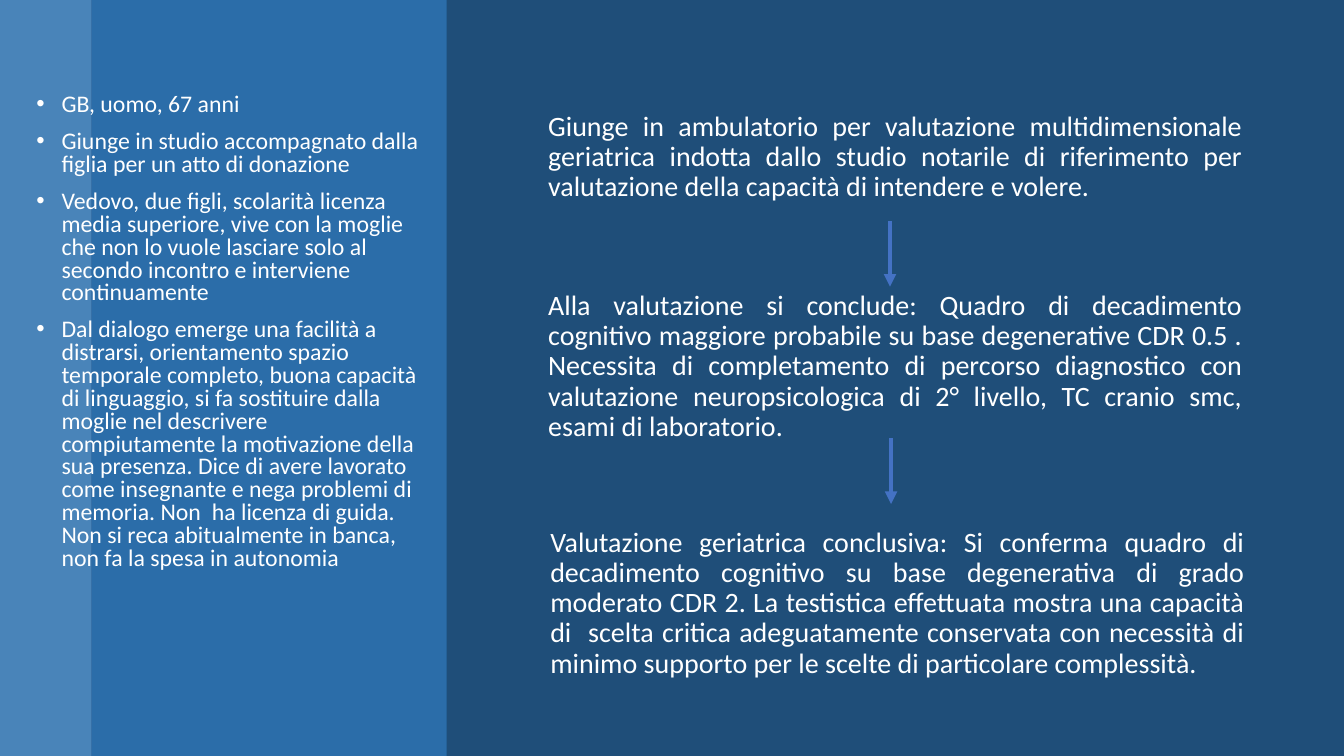
"""Build a slide with a patient profile beside a three-step assessment path."""
import pptx
import pptx.dml.color
import pptx.enum.shapes
import pptx.enum.text
import pptx.oxml.ns
import pptx.oxml.xmlchemy
import pptx.util

Pt = pptx.util.Pt
COLORS = {"background": "1F4E79", "edge": "5B9BD5", "panel": "2E75B6",
          "text": "FFFFFF", "arrow": "4472C4"}
FONT = "Calibri"
SLIDE_WIDTH, SLIDE_HEIGHT = 960, 540

BANDS = [("edge", 0, 65.5, 70), ("panel", 65.5, 253.5, 80)]
PROFILE = [
    "GB, uomo, 67 anni",
    "Giunge in studio accompagnato dalla figlia per un atto di donazione",
    "Vedovo, due figli, scolarità licenza media superiore, vive con la moglie che non lo "
    "vuole lasciare solo al secondo incontro e interviene continuamente",
    "Dal dialogo emerge una facilità a distrarsi, orientamento spazio temporale completo, "
    "buona capacità di linguaggio, si fa sostituire dalla moglie nel descrivere compiutamente "
    "la motivazione della sua presenza. Dice di avere lavorato come insegnante e nega problemi "
    "di memoria. Non  ha licenza di guida. Non si reca abitualmente in banca, non fa la spesa "
    "in autonomia",
]
STEPS = [
    (384.5, 76.5, 102,
     "Giunge in ambulatorio per valutazione multidimensionale geriatrica indotta dallo studio "
     "notarile di riferimento per valutazione della capacità di intendere e volere."),
    (384.5, 204.5, 132,
     "Alla valutazione si conclude: Quadro di decadimento cognitivo maggiore probabile su base "
     "degenerative CDR 0.5 . Necessita di completamento di percorso diagnostico con valutazione "
     "neuropsicologica di 2° livello, TC cranio smc, esami di laboratorio."),
    (386, 373.5, 143,
     "Valutazione geriatrica conclusiva: Si conferma quadro di decadimento cognitivo su base "
     "degenerativa di grado moderato CDR 2. La testistica effettuata mostra una capacità di  "
     "scelta critica adeguatamente conservata con necessità di minimo supporto per le scelte "
     "di particolare complessità."),
]
STEP_WIDTH = 510
ARROWS = [(635.75, 157.75), (636.5, 313)]
ARROW_LENGTH = 47


def color(name):
    return pptx.dml.color.RGBColor.from_string(COLORS[name])


def add_xml(parent, tag, **attributes):
    child = pptx.oxml.xmlchemy.OxmlElement(tag)
    for key, value in attributes.items():
        child.set(key, str(value))
    parent.append(child)


def place(shape, left, top, width, height):
    shape.left, shape.top, shape.width, shape.height = map(Pt, (left, top, width, height))


def format_para(para, size, line_spacing, before, after):
    para.line_spacing = line_spacing
    para.space_before, para.space_after = Pt(before), Pt(after)
    for span in para.runs:
        span.font.size, span.font.name = Pt(size), FONT
        span.font.color.rgb = color("text")


def add_band(slide, name, left, width, opacity):
    band = slide.shapes.add_shape(pptx.enum.shapes.MSO_SHAPE.RECTANGLE,
                                  Pt(left), 0, Pt(width), Pt(SLIDE_HEIGHT))
    band.shadow.inherit = False
    band.fill.solid()
    band.fill.fore_color.rgb = color(name)
    band.line.fill.background()
    fill = band.element.spPr.find(pptx.oxml.ns.qn("a:solidFill"))
    add_xml(fill[0], "a:alpha", val=opacity * 1000)


def fill_profile(slide):
    body = slide.placeholders[1]
    place(body, 18.75, 64, 288.75, 383)
    body.element.getparent().append(body.element)
    frame = body.text_frame
    frame.text = "\n".join(PROFILE)
    frame.auto_size = pptx.enum.text.MSO_AUTO_SIZE.NONE
    for para in frame.paragraphs:
        format_para(para, 17, 0.8, 10, 0)
        properties = para._p.get_or_add_pPr()
        properties.set("marL", str(int(Pt(18))))
        properties.set("indent", str(int(Pt(-18))))
        add_xml(properties, "a:buFont", typeface="Arial")
        add_xml(properties, "a:buChar", char="•")


def add_step(slide, left, top, height, text):
    box = slide.shapes.add_textbox(Pt(left), Pt(top), Pt(STEP_WIDTH), Pt(height))
    frame = box.text_frame
    frame.word_wrap = True
    frame.text = text
    para = frame.paragraphs[0]
    para.alignment = pptx.enum.text.PP_ALIGN.JUSTIFY
    format_para(para, 20, 0.9, 0, 6)


def add_arrow(slide, x, top):
    arrow = slide.shapes.add_connector(pptx.enum.shapes.MSO_CONNECTOR.STRAIGHT,
                                       Pt(x), Pt(top), Pt(x), Pt(top + ARROW_LENGTH))
    arrow.line.color.rgb = color("arrow")
    arrow.line.width = Pt(3)
    properties = arrow.element.spPr
    add_xml(properties.find(pptx.oxml.ns.qn("a:ln")), "a:tailEnd", type="triangle")
    add_xml(properties, "a:effectLst")


def main():
    deck = pptx.Presentation()
    deck.slide_width, deck.slide_height = Pt(SLIDE_WIDTH), Pt(SLIDE_HEIGHT)
    slide = deck.slides.add_slide(deck.slide_layouts[1])
    slide.background.fill.solid()
    slide.background.fill.fore_color.rgb = color("background")
    title = slide.shapes.title.element
    title.getparent().remove(title)
    for band in BANDS:
        add_band(slide, *band)
    fill_profile(slide)
    for step in STEPS:
        add_step(slide, *step)
    for arrow in ARROWS:
        add_arrow(slide, *arrow)
    deck.save("out.pptx")


if __name__ == "__main__":
    main()
